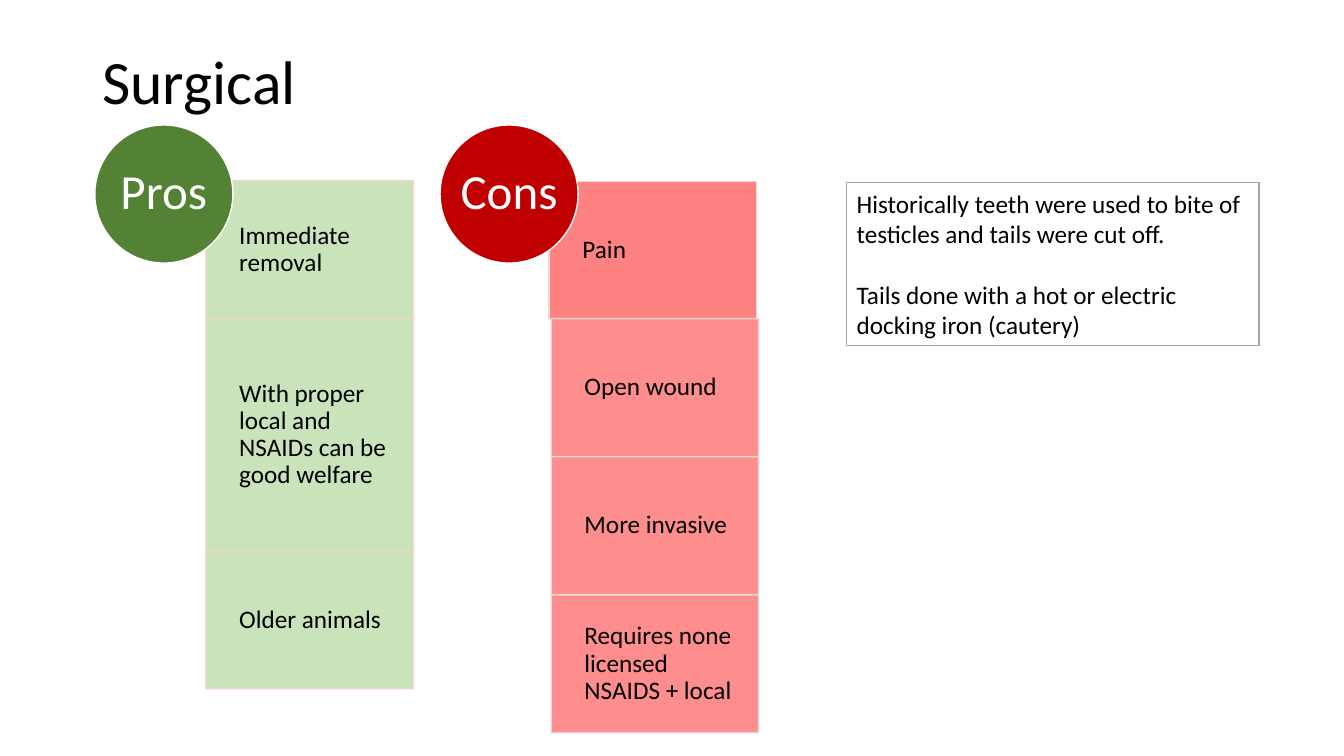
from dataclasses import dataclass

from lxml.etree import SubElement
from pptx import Presentation
from pptx.dml.color import RGBColor
from pptx.enum.shapes import MSO_SHAPE as Preset
from pptx.enum.text import MSO_ANCHOR as Anchor, PP_ALIGN as Align
from pptx.oxml.ns import qn
from pptx.shapes.autoshape import Shape
from pptx.slide import Slide
from pptx.util import Cm, Pt


@dataclass(frozen=True)
class Theme:
    font: str = "Calibri"
    title_size: float = 44
    badge_size: float = 35
    body_size: float = 18
    black: str = "000000"
    white: str = "FFFFFF"
    note_line: str = "A5A5A5"
    pros_badge: str = "548235"
    pros_card: str = "C5E0B4"
    cons_badge: str = "C00000"
    cons_card: str = "FE8282"


@dataclass(frozen=True)
class Card:
    text: str
    line: str
    height: float = 3.48
    opacity: int = 90
    shift_x: float = 0
    shift_y: float = 0


@dataclass(frozen=True)
class Column:
    heading: str
    left: float
    badge_color: str
    card_color: str
    cards: tuple[Card, ...]


THEME = Theme()

# Column geometry in centimetres
STACK_TOP = 4.55
CARD_WIDTH = 5.23
BADGE_SIZE = 3.48
BADGE_TOP = 3.15
BADGE_OVERHANG = 2.8

COLUMNS = (
    Column("Pros", 5.19, THEME.pros_badge, THEME.pros_card, (
        Card("Immediate removal", "F8D7CE"),
        Card("With proper local and NSAIDs can be good welfare", "F4D7D1", height=5.85),
        Card("Older animals", "F1D8D4"),
    )),
    Column("Cons", 13.89, THEME.cons_badge, THEME.cons_card, (
        Card("Pain", "EDD9D7", opacity=100, shift_x=-0.05, shift_y=0.02),
        Card("Open wound", "E9DBDA"),
        Card("More invasive", "E5DEDD"),
        Card("Requires none licensed NSAIDS + local", "E1E1E1"),
    )),
)

NOTES = (
    "Historically teeth were used to bite of testicles and tails were cut off.",
    "Tails done with a hot or electric docking iron (cautery)",
)


def add_box(slide: Slide, preset: Preset, left: float, top: float, width: float,
            height: float, fill: str, line: str, opacity: int = 100) -> Shape:
    box = slide.shapes.add_shape(preset, Cm(left), Cm(top), Cm(width), Cm(height))
    box.shadow.inherit = False
    box.fill.solid()
    box.fill.fore_color.rgb = RGBColor.from_string(fill)
    box.line.color.rgb = RGBColor.from_string(line)
    box.line.width = Pt(1)
    if opacity < 100:
        for color in box._element.spPr.iter(qn("a:srgbClr")):
            SubElement(color, qn("a:alpha"), val=str(opacity * 1000))
    return box


def set_text(shape: Shape, text: str, size: float, color: str, align: Align = Align.LEFT,
             line_spacing: float = 0.9, gap: float = 0) -> None:
    frame = shape.text_frame
    frame.word_wrap = True
    frame.vertical_anchor = Anchor.MIDDLE
    frame.text = text
    for index, paragraph in enumerate(frame.paragraphs):
        paragraph.alignment = align
        paragraph.line_spacing = line_spacing
        if index:
            paragraph.space_before = Pt(gap)
        for run in paragraph.runs:
            run.font.name = THEME.font
            run.font.size = Pt(size)
            run.font.color.rgb = RGBColor.from_string(color)


def set_insets(shape: Shape, left: float, others: float) -> None:
    frame = shape.text_frame
    frame.margin_left = Cm(left)
    frame.margin_top = frame.margin_right = frame.margin_bottom = Cm(others)


def add_column(slide: Slide, column: Column) -> None:
    # Stacked cards
    top = STACK_TOP
    for card in column.cards:
        box = add_box(slide, Preset.RECTANGLE, column.left + card.shift_x, top + card.shift_y,
                      CARD_WIDTH, card.height, column.card_color, card.line, card.opacity)
        set_text(box, card.text, THEME.body_size, THEME.black)
        set_insets(box, 0.84, 0.36)
        top += card.height

    # Round heading over the first card
    badge = add_box(slide, Preset.OVAL, column.left - BADGE_OVERHANG, BADGE_TOP,
                    BADGE_SIZE, BADGE_SIZE, column.badge_color, THEME.white)
    set_text(badge, column.heading, THEME.badge_size, THEME.white, Align.CENTER)
    set_insets(badge, 0, 0)
    badge.text_frame.word_wrap = False


def main() -> None:
    deck = Presentation()
    deck.slide_width, deck.slide_height = Cm(33.87), Cm(19.05)
    slide = deck.slides.add_slide(deck.slide_layouts[6])

    # Title
    title = slide.shapes.add_textbox(Cm(2.33), Cm(0.28), Cm(29.21), Cm(3.68))
    set_text(title, "Surgical", THEME.title_size, THEME.black)

    # Pros and cons
    for column in COLUMNS:
        add_column(slide, column)

    # Background notes
    notes = add_box(slide, Preset.RECTANGLE, 21.34, 4.6, 10.39, 4.11,
                    THEME.white, THEME.note_line)
    set_text(notes, "\n".join(NOTES), THEME.body_size, THEME.black, line_spacing=1, gap=22)

    deck.save("out.pptx")


if __name__ == "__main__":
    main()
